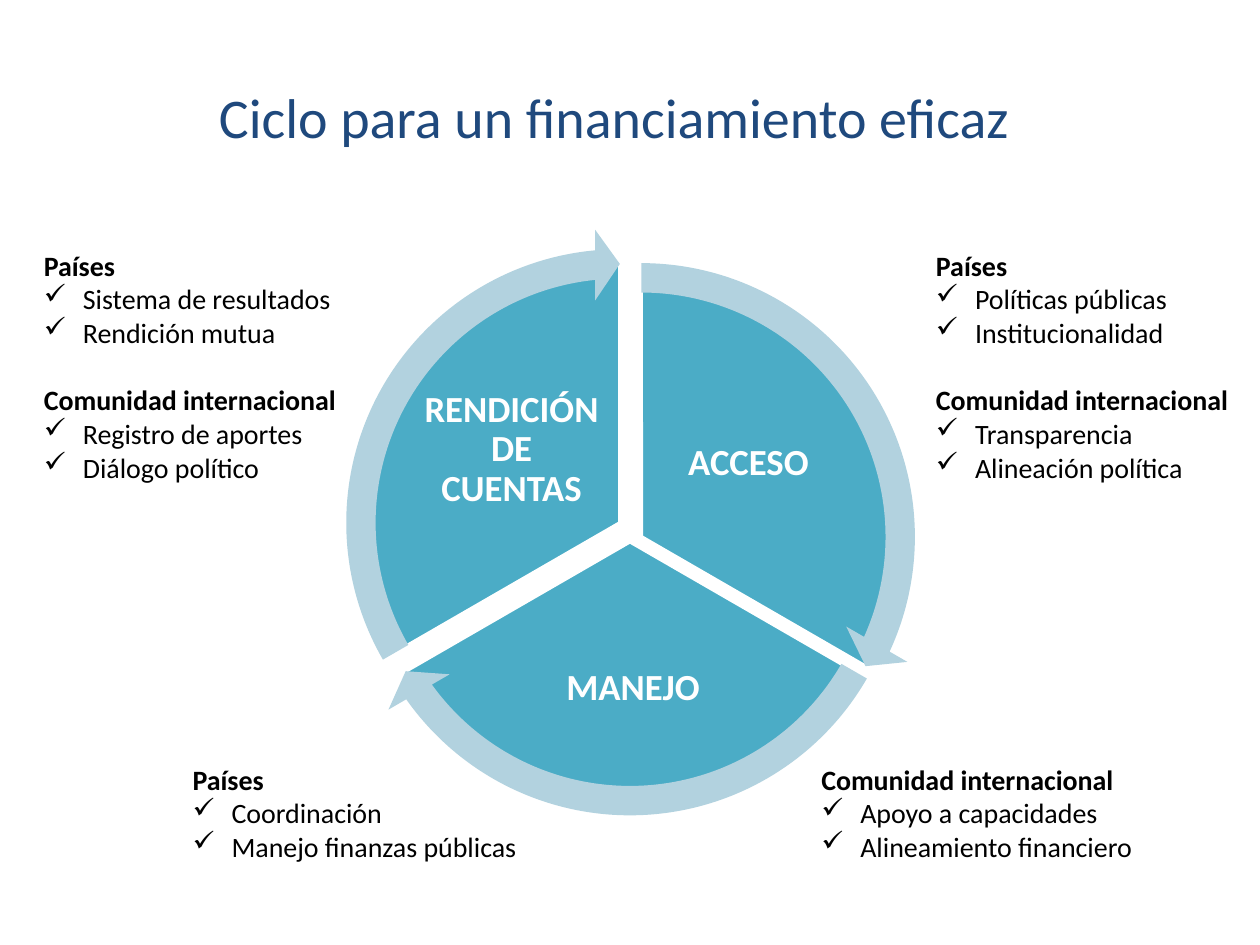
from dataclasses import dataclass

from lxml import etree
from pptx import Presentation
from pptx.dml.color import RGBColor
from pptx.enum.shapes import MSO_SHAPE as Preset
from pptx.enum.text import MSO_ANCHOR as Anchor, MSO_AUTO_SIZE as AutoSize, PP_ALIGN as Align
from pptx.oxml.ns import qn
from pptx.util import Inches, Pt

FONT = "Calibri"
NAVY = RGBColor(0x1F, 0x49, 0x7D)
TEAL = RGBColor(0x4B, 0xAC, 0xC6)
PALE_TEAL = RGBColor(0xB2, 0xD2, 0xDF)
WHITE = RGBColor(0xFF, 0xFF, 0xFF)
BLACK = RGBColor(0, 0, 0)

PIE_SIZE = 4.16
ARROW_SIZE = 4.67
ARROW_OFFSET = (PIE_SIZE - ARROW_SIZE) / 2
# Angles are in units of 100000/60000 degrees, as adjustments expect
TURN = 216
THIRD = TURN / 3
HEAD_ANGLE = 3.28
BAND, HEAD_WIDTH = 0.05, 0.06
INDENT = Inches(0.31)
HEADING_GAP = Pt(19.5)


@dataclass
class Stage:
    label: str
    label_area: tuple[float, float, float, float]
    pie_left: float
    pie_top: float
    start: float


@dataclass
class Note:
    area: tuple[float, float, float, float]
    sections: dict[str, list[str]]


STAGES = [
    Stage("ACCESO", (5.2, 3.06, 1.48, 1.24), 3.01, 2.18, 162),
    Stage("MANEJO", (3.91, 4.92, 2.23, 1.09), 2.92, 2.22, 18),
    Stage("RENDICIÓN DE CUENTAS", (3.32, 2.95, 1.48, 1.24), 2.84, 2.07, 90),
]
COUNTRIES, COMMUNITY = "Países", "Comunidad internacional"
NOTES = [
    Note((7.33, 1.92, 2.59, 1.99), {
        COUNTRIES: ["Políticas públicas", "Institucionalidad"],
        COMMUNITY: ["Transparencia", "Alineación política"]}),
    Note((0.25, 1.92, 2.63, 1.99), {
        COUNTRIES: ["Sistema de resultados", "Rendición mutua"],
        COMMUNITY: ["Registro de aportes", "Diálogo político"]}),
    Note((1.43, 6, 2.9, 0.91), {
        COUNTRIES: ["Coordinación", "Manejo finanzas públicas"]}),
    Note((6.42, 6, 3.24, 0.91), {
        COMMUNITY: ["Apoyo a capacidades", "Alineamiento financiero"]}),
]


def style(para, size: float, color: RGBColor, bold: bool = False) -> None:
    font = para.font
    font.name, font.size, font.bold = FONT, Pt(size), bold
    font.color.rgb = color


def add_box(page, area: tuple[float, float, float, float]):
    box = page.shapes.add_textbox(*map(Inches, area))
    box.text_frame.word_wrap = True
    return box


def add_centred_text(page, area, text: str, size: float, color: RGBColor, bold: bool):
    frame = add_box(page, area).text_frame
    frame.vertical_anchor = Anchor.MIDDLE
    frame.text = text
    para = frame.paragraphs[0]
    para.alignment = Align.CENTER
    style(para, size, color, bold)
    return frame


def add_ring_shape(page, preset, left: float, top: float, size: float,
                   color: RGBColor, adjustments: list[float]):
    shape = page.shapes.add_shape(preset, Inches(left), Inches(top), Inches(size), Inches(size))
    for index, value in enumerate(adjustments):
        shape.adjustments[index] = value
    shape.shadow.inherit = False
    shape.fill.solid()
    shape.fill.fore_color.rgb = color
    return shape


def add_sector(page, stage: Stage) -> None:
    end = (stage.start + THIRD) % TURN
    pie = add_ring_shape(page, Preset.PIE, stage.pie_left, stage.pie_top, PIE_SIZE,
                         TEAL, [stage.start, end])
    pie.line.color.rgb = WHITE
    pie.line.width = Pt(2)
    frame = add_centred_text(page, stage.label_area, stage.label, 21, WHITE, True)
    frame.margin_left = frame.margin_right = Inches(0.03)
    frame.margin_top = frame.margin_bottom = Inches(0.03)
    frame.paragraphs[0].line_spacing = 0.9


def add_arrow(page, stage: Stage) -> None:
    tip = (stage.start + THIRD) % TURN - HEAD_ANGLE
    arrow = add_ring_shape(page, Preset.CIRCULAR_ARROW, stage.pie_left + ARROW_OFFSET,
                           stage.pie_top + ARROW_OFFSET, ARROW_SIZE, PALE_TEAL,
                           [BAND, HEAD_ANGLE, tip, stage.start, HEAD_WIDTH])
    arrow.line.fill.background()


def add_check(para) -> None:
    properties = para._p.get_or_add_pPr()
    properties.set("marL", str(INDENT))
    properties.set("indent", str(-INDENT))
    etree.SubElement(properties, qn("a:buChar")).set("char", "✓")


def add_note(page, note: Note) -> None:
    frame = add_box(page, note.area).text_frame
    frame.auto_size = AutoSize.SHAPE_TO_FIT_TEXT
    for number, (heading, items) in enumerate(note.sections.items()):
        para = frame.add_paragraph() if number else frame.paragraphs[0]
        para.text = heading
        if number:
            para.space_before = HEADING_GAP
        style(para, 16, BLACK, True)
        for item in items:
            para = frame.add_paragraph()
            para.text = item
            add_check(para)
            style(para, 16, BLACK)


def main() -> None:
    deck = Presentation()
    deck.slide_width, deck.slide_height = Inches(10), Inches(7.5)
    page = deck.slides.add_slide(deck.slide_layouts[6])

    # Title
    add_centred_text(page, (0.25, 0.3, 9.25, 1.25),
                     "Ciclo para un financiamiento eficaz", 32, NAVY, False)

    # Cycle: sectors first, arrows on top
    for stage in STAGES:
        add_sector(page, stage)
    for stage in STAGES:
        add_arrow(page, stage)

    # Notes around the cycle
    for note in NOTES:
        add_note(page, note)

    deck.save("out.pptx")


if __name__ == "__main__":
    main()
